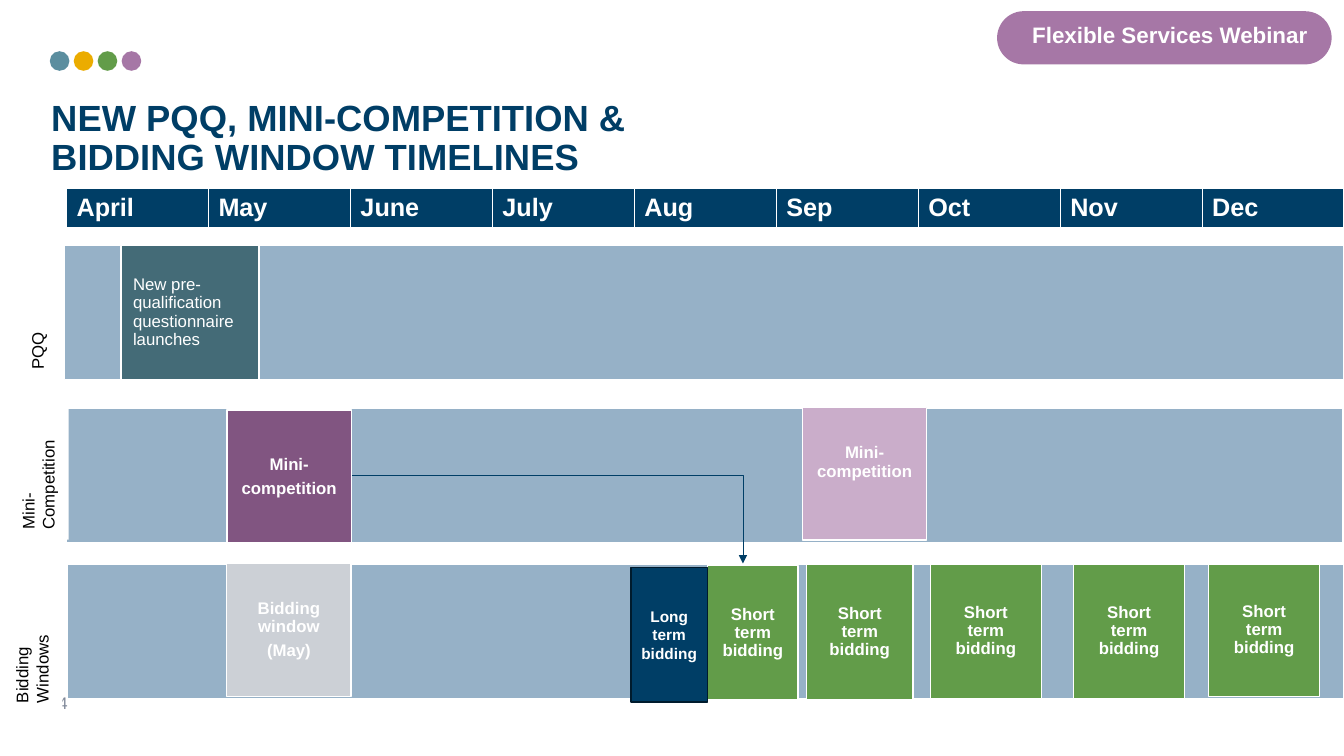
import dataclasses

import lxml.etree
import pptx
import pptx.dml.color
import pptx.enum.shapes
import pptx.enum.text
import pptx.oxml.ns
import pptx.util

Pt = pptx.util.Pt
SHAPE = pptx.enum.shapes.MSO_SHAPE
ALIGN = pptx.enum.text.PP_ALIGN
ANCHOR = pptx.enum.text.MSO_ANCHOR
GROW = pptx.enum.text.MSO_AUTO_SIZE.SHAPE_TO_FIT_TEXT
qn = pptx.oxml.ns.qn


@dataclasses.dataclass(frozen=True)
class Theme:
    """Colours, type sizes and spacing of the slide."""
    font: str = "Arial"
    navy: str = "003E66"
    navy_edge: str = "001B2D"
    white: str = "FFFFFF"
    black: str = "000000"
    grey: str = "808999"
    band: str = "96B1C7"
    teal: str = "446B77"
    blue: str = "5B8E9F"
    amber: str = "EBAC00"
    green: str = "629C49"
    purple: str = "A677A6"
    plum: str = "815581"
    lilac: str = "CAADCA"
    silver: str = "CCD0D6"
    title: float = 26
    month: float = 18
    badge: float = 16
    body: float = 12
    small: float = 11
    gap: float = 4.2
    inset: float = 8.64
    tight: float = 0.9


T = Theme()


def rgb(value):
    """Return a colour from its hex value."""
    return pptx.dml.color.RGBColor.from_string(value)


def write(tf, lines, size, color, bold=False, align=ALIGN.LEFT, spacing=None, gap=None):
    """Fill a text frame with one paragraph per line."""
    tf.word_wrap = True
    for i, line in enumerate(lines):
        p = tf.paragraphs[0] if i == 0 else tf.add_paragraph()
        p.text = line
        p.alignment = align
        if spacing:
            p.line_spacing = spacing
        if gap:
            p.space_after = Pt(gap)
        p.font.name, p.font.size, p.font.bold = T.font, Pt(size), bold
        p.font.color.rgb = rgb(color)


def set_insets(tf, inset):
    """Give a text frame the same inset on each side."""
    tf.margin_left = tf.margin_top = tf.margin_right = tf.margin_bottom = Pt(inset)


def shape(s, box, fill, line=None, kind=SHAPE.RECTANGLE):
    """Draw a flat filled shape."""
    sp = s.shapes.add_shape(kind, *map(Pt, box))
    sp.shadow.inherit = False
    sp.fill.solid()
    sp.fill.fore_color.rgb = rgb(fill)
    if line:
        sp.line.color.rgb, sp.line.width = rgb(line), Pt(1)
    else:
        sp.line.fill.background()
    return sp


def text(s, box, lines, size, color, **style):
    """Place a text box."""
    tf = s.shapes.add_textbox(*map(Pt, box)).text_frame
    write(tf, lines, size, color, **style)
    return tf


def block(s, box, fill, lines, bold=True, align=ALIGN.CENTER, gap=T.gap):
    """Draw an event block with white text."""
    tf = shape(s, box, fill, T.white).text_frame
    set_insets(tf, T.inset)
    tf.vertical_anchor = ANCHOR.MIDDLE
    write(tf, lines, T.body, T.white, bold, align, T.tight, gap)
    return tf


def header(s, box):
    """Place the dots, title and badge."""
    x, y, w, h = box
    for i, color in enumerate((T.blue, T.amber, T.green, T.purple)):
        shape(s, (x - 1 + 17.1 * i, y + 36.6, 14, 14), color, kind=SHAPE.OVAL)
    tf = text(s, (x, y + 71.3, 476.6, 54.7),
              ["NEW PQQ, MINI-COMPETITION & BIDDING WINDOW TIMELINES"],
              T.title, T.navy, bold=True, spacing=T.tight)
    set_insets(tf, 0)
    badge = shape(s, (x + w - 239, y + 8, 239, 38), T.purple, kind=SHAPE.ROUNDED_RECTANGLE)
    badge.adjustments[0] = 0.5
    text(s, (x + w - 226.8, y + 11.5, 222.5, 26.6), ["Flexible Services Webinar"],
         T.badge, T.white, bold=True, align=ALIGN.CENTER)


def months(s, box):
    """Place the month table."""
    names = "April May June July Aug Sep Oct Nov Dec".split()
    frame = s.shapes.add_table(1, len(names), *map(Pt, box))
    for col, name in enumerate(names):
        frame.table.columns[col].width = Pt(box[2] / len(names))
        cell = frame.table.cell(0, col)
        tcPr = cell._tc.get_or_add_tcPr()
        for side, width in zip("LRTB", (1, 1, 1, 3)):
            ln = lxml.etree.SubElement(tcPr, qn(f"a:ln{side}"), w=str(Pt(width)))
            fill = lxml.etree.SubElement(ln, qn("a:solidFill"))
            lxml.etree.SubElement(fill, qn("a:srgbClr"), val=T.white)
        cell.fill.solid()
        cell.fill.fore_color.rgb = rgb(T.navy)
        write(cell.text_frame, [name], T.month, T.white, bold=True)


def lane(s, box, label, label_box):
    """Draw a band with its rotated label."""
    x, y, w, h = box
    shape(s, box, T.band, T.white)
    dx, dy, width = label_box
    sp = shape(s, (x + dx, y + dy, width, h), T.white)
    tf = sp.text_frame
    tf.vertical_anchor = ANCHOR.MIDDLE
    tf.auto_size = GROW
    sp._element.txBody.bodyPr.set("vert", "vert270")
    write(tf, [label], T.body, T.black)


def arrow(s, start, end):
    """Draw an elbow arrow that runs across, then down."""
    c = s.shapes.add_connector(pptx.enum.shapes.MSO_CONNECTOR.ELBOW, *map(Pt, start + end))
    c.line.color.rgb, c.line.width = rgb(T.navy), Pt(0.5)
    lxml.etree.SubElement(c.line._get_or_add_ln(), qn("a:tailEnd"), type="triangle")
    spPr = c._element.spPr
    lxml.etree.SubElement(spPr, qn("a:effectLst"))
    guides = spPr.find(qn("a:prstGeom")).get_or_add_avLst()
    lxml.etree.SubElement(guides, qn("a:gd"), name="adj1", fmla="val 100000")


def pqq_lane(s, box):
    """Place the pre-qualification lane."""
    x, y, w, h = box
    lane(s, box, "PQQ", (-33.8, 0, 28.8))
    block(s, (x + 40.4, y, 98.6, h), T.teal,
          ["New pre-qualification questionnaire launches"], bold=False, align=ALIGN.LEFT)


def mini_lane(s, box):
    """Place the mini-competition lane and its arrow."""
    x, y, w, h = box
    lane(s, box, "Mini-Competition", (-42.5, -2.4, 43.9))
    arrow(s, (x + 159.1, y + 48), (x + 483.1, y + 110.7))
    block(s, (x + 114.6, y + 1.2, 88.8, 95), T.plum, ["Mini-", "competition"])
    tf = block(s, (x + 525.6, y - 0.9, 88.8, 95), T.lilac, ["Mini-competition"])
    tf.margin_bottom = Pt(T.inset + 16)


def bidding_lane(s, box):
    """Place the bidding window lane."""
    x, y, w, h = box
    lane(s, box, "Bidding Windows", (-47.5, 9.9, 43.9))
    block(s, (x + 113.8, y - 0.9, 88.8, 95), T.silver, ["Bidding window", "(May)"])
    for dx, dy, width, height in ((457.2, 0.6, 64.8, 96), (527.8, 0, 76.3, 96.6)):
        block(s, (x + dx, y + dy, width, height), T.green, ["Short term bidding"])
    for dx, height in ((616.3, 95.8), (718.6, 95.8), (815.1, 94.5)):
        block(s, (x + dx, y - 0.4, 79.4, height), T.green, ["Short", "term bidding"], gap=None)
    tf = shape(s, (x + 402.5, y + 2, 54.7, 96), T.navy, T.navy_edge).text_frame
    tf.vertical_anchor = ANCHOR.MIDDLE
    write(tf, ["Long term bidding"], T.small, T.white, True, ALIGN.CENTER)


def main():
    """Build and save the timeline slide."""
    prs = pptx.Presentation()
    prs.slide_width, prs.slide_height = Pt(960), Pt(540)
    s = prs.slides.add_slide(prs.slide_layouts[6])
    text(s, (28, 491, 52.6, 21.6), ["14"], T.body, T.grey)
    header(s, (36.6, 0, 914.6, 130))
    months(s, (47.5, 134.6, 912.6, 28.2))
    pqq_lane(s, (46, 175.2, 914, 96))
    mini_lane(s, (47.6, 291.8, 911.6, 96))
    bidding_lane(s, (48.2, 403.4, 911.6, 96))
    prs.save("out.pptx")


if __name__ == "__main__":
    main()
